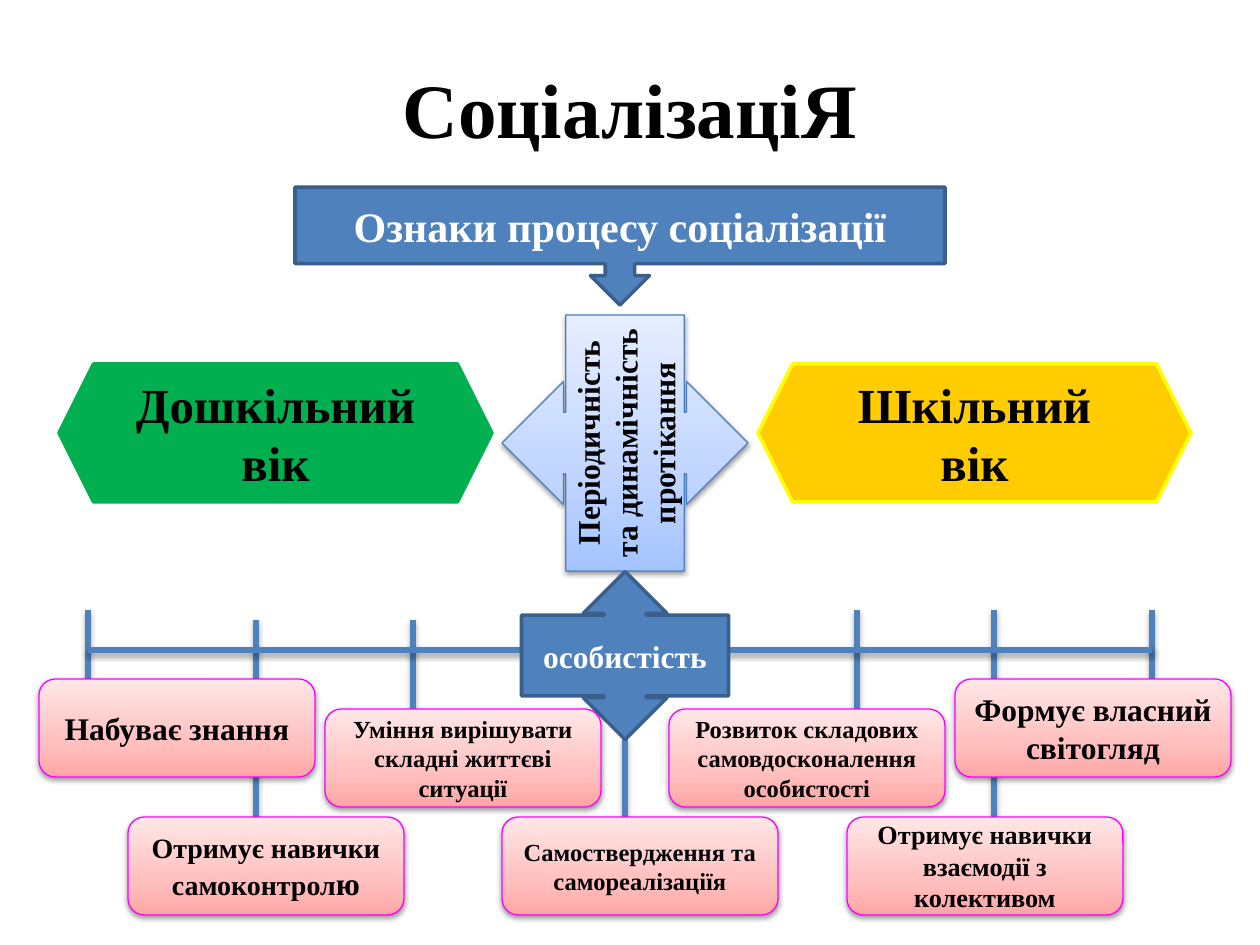
import copy

import lxml.etree
import pptx
import pptx.dml.color
import pptx.enum.shapes
import pptx.enum.text
import pptx.oxml.ns
import pptx.util

EMU_PER_PX = 914400 / 126
SHAPE = pptx.enum.shapes.MSO_SHAPE
BLUE, DARK_BLUE, MAGENTA = "4F81BD", "3A5F8C", "FF00FF"
BLACK, WHITE = "000000", "FFFFFF"
PINK_GRADIENT = ((0, "FFA6A5"), (0.35, "FFC0BF"), (1, "FFE7E7"))
BLUE_GRADIENT = ((0, "A4C4FF"), (0.35, "BFD4FF"), (1, "E6EEFF"))


def px(length):
    return pptx.util.Emu(round(length * EMU_PER_PX))


def rgb(hex_color):
    return pptx.dml.color.RGBColor.from_string(hex_color)


def add_run(paragraph, text, *, size, color=BLACK, bold=True, font="Times New Roman"):
    run = paragraph.add_run()
    run.text = text
    run.font.size = pptx.util.Pt(size)
    run.font.name = font
    run.font.bold = bold
    run.font.color.rgb = rgb(color)


def sub_element(parent, tag, **attributes):
    return lxml.etree.SubElement(parent, pptx.oxml.ns.qn(tag), **attributes)


def add_shadow(effect_list, distance, opacity):
    """Add a soft shadow straight below; distance in EMU, opacity in percent."""
    shadow = sub_element(effect_list, "a:outerShdw", blurRad="40000",
                         dist=str(distance), dir="5400000", rotWithShape="0")
    color = sub_element(shadow, "a:srgbClr", val=BLACK)
    sub_element(color, "a:alpha", val=str(opacity * 1000))


def fill_gradient(shape, stops):
    """Fill from bottom to top with three (position, colour) stops."""
    shape.fill.gradient()
    shape.fill.gradient_angle = 90
    stop_list = shape._element.spPr.find(".//" + pptx.oxml.ns.qn("a:gsLst"))
    stop_list.append(copy.deepcopy(stop_list[-1]))
    for stop, (position, color) in zip(shape.fill.gradient_stops, stops):
        stop.position = position
        stop.color.rgb = rgb(color)


class SlideBuilder:
    def __init__(self, slide):
        self.slide = slide

    def add_text(self, shape, runs, color):
        frame = shape.text_frame
        frame.word_wrap = True
        frame.vertical_anchor = pptx.enum.text.MSO_ANCHOR.MIDDLE
        paragraph = frame.paragraphs[0]
        paragraph.alignment = pptx.enum.text.PP_ALIGN.CENTER
        for text, size in runs:
            add_run(paragraph, text, size=size, color=color)

    def title(self, left, top, width, height, text, size):
        box = self.slide.shapes.add_textbox(px(left), px(top), px(width), px(height))
        self.add_text(box, [(text, size)], BLACK)

    def line(self, x1, y1, x2, y2):
        connector = self.slide.shapes.add_connector(
            pptx.enum.shapes.MSO_CONNECTOR.STRAIGHT, px(x1), px(y1), px(x2), px(y2))
        connector.line.color.rgb = rgb(BLUE)
        connector.line.width = pptx.util.Pt(3)
        effect_list = sub_element(connector._element.spPr, "a:effectLst")
        add_shadow(effect_list, 23000, 35)

    def shape(self, kind, left, top, width, height, runs, *, fill, line,
              color=BLACK, rotation=0, upward=False):
        """Add a shape; a tuple of stops as fill gives a gradient with a shadow."""
        shape = self.slide.shapes.add_shape(kind, px(left), px(top), px(width), px(height))
        shape.rotation = rotation
        shape.shadow.inherit = False
        shape.line.color.rgb = rgb(line)
        if isinstance(fill, str):
            shape.fill.solid()
            shape.fill.fore_color.rgb = rgb(fill)
            shape.line.width = pptx.util.Pt(2)
        else:
            fill_gradient(shape, fill)
            shape.line.width = pptx.util.Pt(0.75)
            add_shadow(shape._element.spPr.find(pptx.oxml.ns.qn("a:effectLst")), 20000, 38)
        self.add_text(shape, runs, color)
        if upward:
            shape.text_frame._txBody.bodyPr.set("vert", "vert270")

    def trait(self, left, top, *runs):
        self.shape(SHAPE.ROUNDED_RECTANGLE, left, top, 276, 98, runs,
                   fill=PINK_GRADIENT, line=MAGENTA)


def main():
    presentation = pptx.Presentation()
    presentation.slide_width = pptx.util.Inches(10)
    presentation.slide_height = pptx.util.Inches(7.5)
    builder = SlideBuilder(presentation.slides.add_slide(presentation.slide_layouts[6]))

    # Branches first, so that every box covers the ends of its line
    for x, top, bottom in ((994, 610, 827), (256, 620, 837), (88, 610, 679),
                           (1152, 610, 679), (413, 620, 728), (857, 610, 718),
                           (625, 738, 876)):
        builder.line(x, top, x, bottom)
    builder.line(88, 650, 1152, 650)

    builder.title(63, 38, 1134, 140, "СоціалізаціЯ", 44)
    for left, text, fill, line in ((59, "Дошкільний вік", "00B050", "00B050"),
                                   (758, "Шкільний вік", "FFCC00", "FFFF00")):
        builder.shape(SHAPE.HEXAGON, left, 364, 433, 138, [(text, 28)], fill=fill, line=line)
    builder.shape(SHAPE.DOWN_ARROW_CALLOUT, 295, 187, 650, 118,
                  [("Ознаки процесу соціалізації", 24)],
                  fill=BLUE, line=DARK_BLUE, color=WHITE)
    builder.shape(SHAPE.LEFT_RIGHT_ARROW_CALLOUT, 502, 315, 246, 256,
                  [("Періодичність та динамічність протікання", 18)],
                  fill=BLUE_GRADIENT, line="4B7EBC", upward=True)
    builder.shape(SHAPE.LEFT_RIGHT_ARROW_CALLOUT, 541, 552, 168, 207,
                  [("особистість", 18)], fill=BLUE, line=DARK_BLUE, color=WHITE,
                  rotation=90, upward=True)

    builder.trait(39, 679, ("Набуває знання", 18))
    builder.trait(955, 679, ("Формує власний світогляд", 18))
    builder.trait(325, 709, ("Уміння вирішувати складні життєві ситуації", 14))
    builder.trait(669, 709, ("Розвиток складових самовдосконалення особистості", 14))
    builder.trait(128, 817, ("Отримує навички самоконтрол", 16), ("ю", 18))
    builder.trait(502, 817, ("Самоствердження та самореалізаціїя", 14))
    builder.trait(847, 817, ("Отримує навички взаємодії з колективом", 15))

    presentation.save("out.pptx")


if __name__ == "__main__":
    main()
